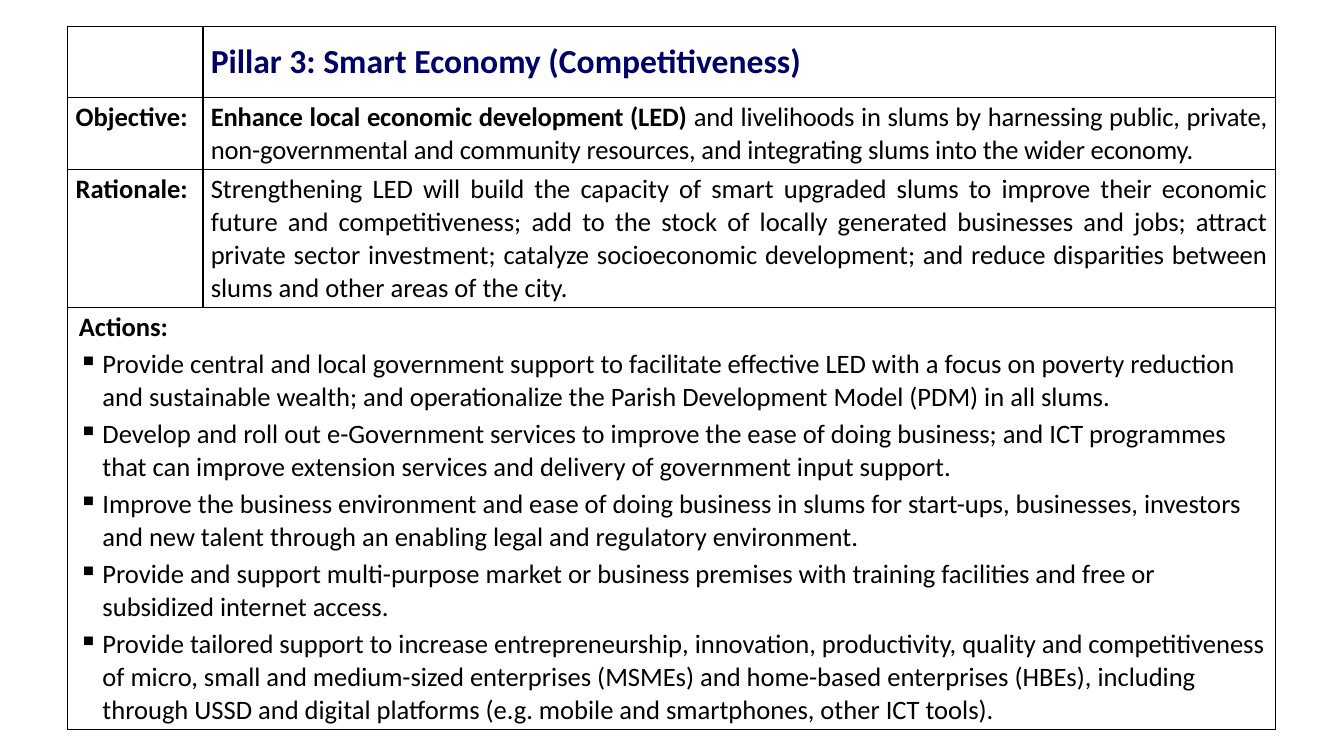
from dataclasses import dataclass

from lxml import etree
from pptx import Presentation
from pptx.dml.color import RGBColor
from pptx.enum.text import MSO_ANCHOR, PP_ALIGN
from pptx.oxml.ns import qn
from pptx.util import Pt

MIDDLE, TOP = MSO_ANCHOR.MIDDLE, MSO_ANCHOR.TOP
LEFT, JUST = PP_ALIGN.LEFT, PP_ALIGN.JUSTIFY


@dataclass(frozen=True)
class Theme:
    font: str = "Calibri"
    ink: str = "000000"
    navy: str = "000066"
    head: float = 24
    body: float = 19
    rule: float = 1
    lead: float = 1.02


THEME = Theme()

COLS = [96.5, 766]
ROWS = [51, 51, 98, 301]
TITLE = "Pillar\u00a03: Smart Economy (Competitiveness)"
GOAL = "Enhance local economic development (LED)"
GOAL_REST = (" and livelihoods in slums by harnessing public, private, non-governmental "
             "and community resources, and integrating slums into the wider economy.")
REASON = ("Strengthening LED will build the capacity of smart upgraded slums to improve "
          "their economic future and competitiveness; add to the stock of locally generated "
          "businesses and jobs; attract private sector investment; catalyze socioeconomic "
          "development; and reduce disparities between slums and other areas of the city. ")
ACTIONS = [
    "Provide central and local government support to facilitate effective LED with a focus "
    "on poverty reduction and sustainable wealth; and operationalize the Parish Development "
    "Model (PDM) in all slums.",
    "Develop and roll out e-Government services to improve the ease of doing business; and "
    "ICT programmes that can improve extension services and delivery of government input "
    "support.",
    "Improve the business environment and ease of doing business in slums for start-ups, "
    "businesses, investors and new talent through an enabling legal and regulatory "
    "environment.",
    "Provide and support multi-purpose market or business premises with training facilities "
    "and free or subsidized internet access.",
    "Provide tailored support to increase entrepreneurship, innovation, productivity, "
    "quality and competitiveness of micro, small and medium-sized enterprises (MSMEs) and "
    "home-based enterprises (HBEs), including through USSD and digital platforms (e.g. "
    "mobile and smartphones, other ICT tools).",
]


def add_text(para, text, size=THEME.body, color=THEME.ink, bold=False, track=0):
    run = para.add_run()
    run.text = text
    font = run.font
    font.name, font.size, font.bold = THEME.font, Pt(size), bold
    font.color.rgb = RGBColor.from_string(color)
    if track:
        run._r.get_or_add_rPr().set("spc", str(track))


def set_para(para, align=LEFT, after=0, indent=0, hang=0, mark=None):
    para.alignment = align
    para.line_spacing = THEME.lead
    para.space_after = Pt(after)
    props = para._p.get_or_add_pPr()
    props.set("marL", str(Pt(indent)))
    props.set("indent", str(-Pt(hang)))
    if mark:
        etree.SubElement(props, qn("a:buChar")).set("char", mark)
    return para


def set_cell(cell, side=5.6, anchor=TOP):
    cell.margin_left = cell.margin_right = Pt(side)
    cell.margin_top = cell.margin_bottom = Pt(2.2)
    cell.vertical_anchor = anchor
    props = cell._tc.get_or_add_tcPr()
    for edge in ("a:lnL", "a:lnR", "a:lnT", "a:lnB"):
        line = etree.SubElement(props, qn(edge), w=str(Pt(THEME.rule)))
        fill = etree.SubElement(line, qn("a:solidFill"))
        etree.SubElement(fill, qn("a:srgbClr"), val=THEME.ink)
    cell.fill.background()
    return cell.text_frame.paragraphs[0]


def add_grid(slide):
    width, height = Pt(sum(COLS)), Pt(sum(ROWS))
    grid = slide.shapes.add_table(len(ROWS), len(COLS), Pt(48.5), Pt(18.7),
                                  width, height).table
    grid.first_row = grid.horz_banding = False
    for col, size in zip(grid.columns, COLS):
        col.width = Pt(size)
    for row, size in zip(grid.rows, ROWS):
        row.height = Pt(size)
    return grid


def fill_row(grid, row, label, parts):
    para = set_para(set_cell(grid.cell(row, 0)), align=JUST)
    add_text(para, label, bold=True)
    para = set_para(set_cell(grid.cell(row, 1)), align=JUST)
    for text, form in parts:
        add_text(para, text, **form)


def fill_list(grid, row, label, items):
    cell = grid.cell(row, 0)
    cell.merge(grid.cell(row, 1))
    set_cell(grid.cell(row, 1), side=2.2)
    para = set_para(set_cell(cell, side=2.2), after=3, indent=5.7)
    add_text(para, label, bold=True)
    for item in items:
        para = cell.text_frame.add_paragraph()
        set_para(para, after=3, indent=22.5, hang=17, mark="▪")
        add_text(para, item)


def main():
    deck = Presentation()
    deck.slide_width, deck.slide_height = Pt(960), Pt(540)
    slide = deck.slides.add_slide(deck.slide_layouts[6])
    grid = add_grid(slide)

    # Heading
    set_cell(grid.cell(0, 0))
    para = set_para(set_cell(grid.cell(0, 1), anchor=MIDDLE), after=8)
    add_text(para, TITLE, size=THEME.head, color=THEME.navy, bold=True)

    # Objective and rationale
    fill_row(grid, 1, "Objective:", [(GOAL, {"bold": True, "track": -10}),
                                     (GOAL_REST, {"track": -10})])
    fill_row(grid, 2, "Rationale:", [(REASON, {})])

    # Actions
    fill_list(grid, 3, "Actions:", ACTIONS)

    deck.save("out.pptx")


if __name__ == "__main__":
    main()
